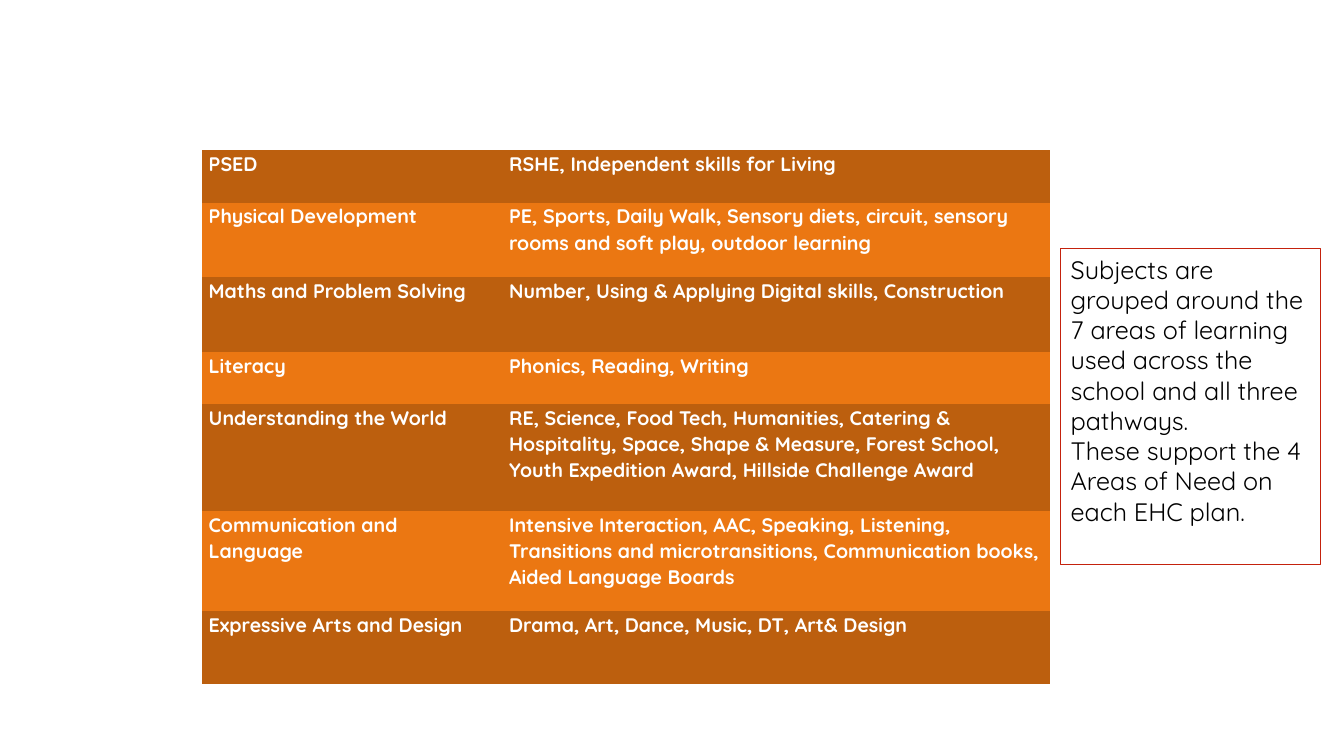
import pptx
import pptx.util
from dataclasses import dataclass
from pptx.dml.color import RGBColor
from pptx.enum.shapes import MSO_SHAPE
from pptx.enum.text import MSO_ANCHOR, PP_ALIGN
from pptx.oxml.ns import qn
from pptx.util import Inches


@dataclass(frozen=True)
class Theme:
    font: str = "Quicksand"
    table_size: int = 14
    note_size: int = 18
    line_spacing: float = 1.07
    dark_band: str = "BC5F0E"
    light_band: str = "EB7712"
    table_text: str = "FFFFFF"
    note_text: str = "000000"
    note_border: str = "C4220D"


THEME = Theme()
PLAIN_TABLE_STYLE = "{2D5ABB26-0587-4C30-8999-92F81FD0307C}"
COLUMN_WIDTHS = (2.98, 5.43)

# Area of learning, its subjects, row height in inches
AREAS = [
    ("PSED", "RSHE, Independent skills for Living", 0.52),
    ("Physical Development",
     "PE, Sports, Daily Walk, Sensory diets, circuit, sensory rooms "
     "and soft play, outdoor learning", 0.74),
    ("Maths and Problem Solving",
     "Number, Using & Applying Digital skills, Construction", 0.74),
    ("Literacy", "Phonics, Reading, Writing", 0.52),
    ("Understanding the World",
     "RE, Science, Food Tech, Humanities, Catering & Hospitality, Space, "
     "Shape & Measure, Forest School, Youth Expedition Award, "
     "Hillside Challenge Award", 1.06),
    ("Communication and Language",
     "Intensive Interaction, AAC, Speaking, Listening, Transitions and "
     "microtransitions, Communication books, Aided Language Boards", 0.99),
    ("Expressive Arts and Design",
     "Drama, Art, Dance, Music, DT, Art& Design", 0.73),
]

NOTE = [
    "Subjects are grouped around the 7 areas of learning used across "
    "the school and all three pathways.",
    "These support the 4 Areas of Need on each EHC plan.",
]


def format_runs(para, size, color, bold=False):
    for span in para.runs:
        span.font.name = THEME.font
        span.font.size = pptx.util.Pt(size)
        span.font.bold = bold
        span.font.color.rgb = RGBColor.from_string(color)


def fill_cell(cell, text, band):
    cell.fill.solid()
    cell.fill.fore_color.rgb = RGBColor.from_string(band)
    cell.margin_left = cell.margin_right = Inches(0.07)
    cell.margin_top = cell.margin_bottom = 0
    cell.text_frame.text = text
    para = cell.text_frame.paragraphs[0]
    para.line_spacing = THEME.line_spacing
    format_runs(para, THEME.table_size, THEME.table_text, bold=True)


def add_areas_table(page, left, top):
    height = sum(area[-1] for area in AREAS)
    frame = page.shapes.add_table(
        len(AREAS), len(COLUMN_WIDTHS), Inches(left), Inches(top),
        Inches(sum(COLUMN_WIDTHS)), Inches(height))
    table = frame.table
    table.first_row = table.horz_banding = False
    # A style without grid lines
    style = frame.element.find(".//" + qn("a:tableStyleId"))
    style.text = PLAIN_TABLE_STYLE

    for column, width in zip(table.columns, COLUMN_WIDTHS):
        column.width = Inches(width)
    for index, (area, subjects, row_height) in enumerate(AREAS):
        table.rows[index].height = Inches(row_height)
        band = THEME.light_band if index % 2 else THEME.dark_band
        for column, text in enumerate((area, subjects)):
            fill_cell(table.cell(index, column), text, band)


def add_note(page, left, top, width, height):
    box = page.shapes.add_shape(
        MSO_SHAPE.RECTANGLE, Inches(left), Inches(top),
        Inches(width), Inches(height))
    box.shadow.inherit = False
    box.fill.background()
    box.line.color.rgb = RGBColor.from_string(THEME.note_border)
    box.line.width = pptx.util.Pt(0.75)
    box.text_frame.word_wrap = True
    box.text_frame.vertical_anchor = MSO_ANCHOR.TOP
    box.text_frame.text = "\n".join(NOTE)
    for para in box.text_frame.paragraphs:
        para.alignment = PP_ALIGN.LEFT
        format_runs(para, THEME.note_size, THEME.note_text)


def main():
    deck = pptx.Presentation()
    deck.slide_width = Inches(13.33)
    deck.slide_height = Inches(7.5)
    page = deck.slides.add_slide(deck.slide_layouts[6])

    # Side note, then the areas of learning
    add_note(page, 10.52, 2.47, 2.58, 3.13)
    add_areas_table(page, 2, 1.49)

    deck.save("out.pptx")


if __name__ == "__main__":
    main()
